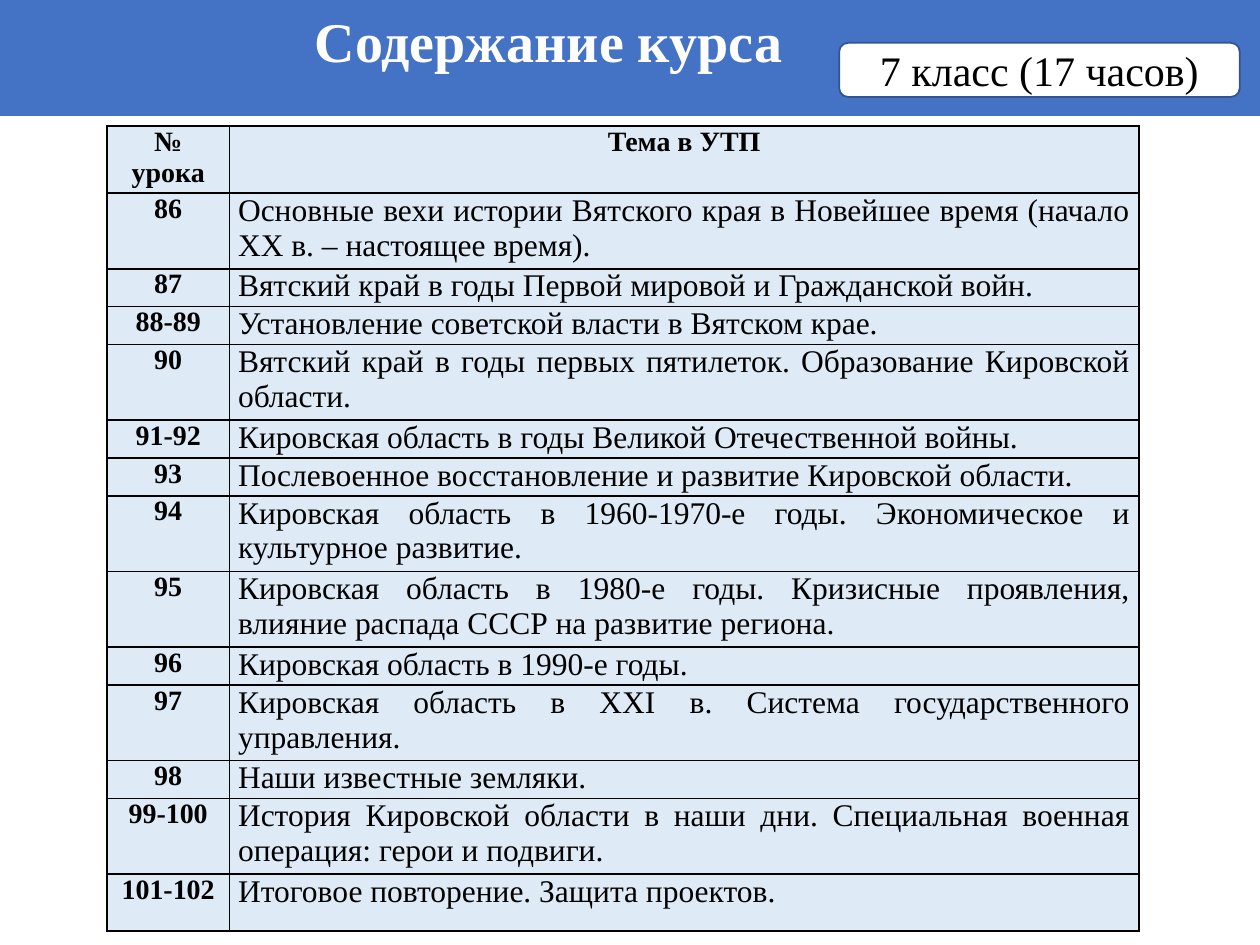
import pptx
import pptx.dml.color
import pptx.enum.shapes
import pptx.enum.text
import pptx.oxml
import pptx.oxml.ns
import pptx.util
from pptx.util import Inches

FONT = "Times New Roman"
ALIGN = pptx.enum.text.PP_ALIGN
SHAPE = pptx.enum.shapes.MSO_SHAPE

HEADER_HEIGHT, LINE_HEIGHT, LAST_HEIGHT = 0.53, 0.3, 0.45
COLUMN_WIDTHS = (0.97, 7.22)
HEADERS = ("№ урока", "Тема в УТП")
# Lesson numbers, topic, number of text lines
LESSONS = [
    ("86", "Основные вехи истории Вятского края в Новейшее время (начало XX в. – настоящее время).", 2),
    ("87", "Вятский край в годы Первой мировой и Гражданской войн.", 1),
    ("88-89", "Установление советской власти в Вятском крае.", 1),
    ("90", "Вятский край в годы первых пятилеток. Образование Кировской области.", 2),
    ("91-92", "Кировская область в годы Великой Отечественной войны.", 1),
    ("93", "Послевоенное восстановление и развитие Кировской области.", 1),
    ("94", "Кировская область в 1960-1970-е годы. Экономическое и культурное развитие.", 2),
    ("95", "Кировская область в 1980-е годы. Кризисные проявления, влияние распада СССР на развитие региона.", 2),
    ("96", "Кировская область в 1990-е годы.", 1),
    ("97", "Кировская область в XXI в. Система государственного управления.", 2),
    ("98", "Наши известные земляки.", 1),
    ("99-100", "История Кировской области в наши дни. Специальная военная операция: герои и подвиги.", 2),
    ("101-102", "Итоговое повторение. Защита проектов.", 1),
]


def rgb(color):
    return pptx.dml.color.RGBColor.from_string(color)


def set_text(tf, text, size, color="000000", bold=False, align=ALIGN.CENTER):
    tf.text = text
    tf.word_wrap = True
    p = tf.paragraphs[0]
    p.alignment = align
    font = p.runs[0].font
    font.name, font.size, font.bold = FONT, pptx.util.Pt(size), bold
    font.color.rgb = rgb(color)


def add_box(s, kind, left, top, width, height, fill, line=None):
    sp = s.shapes.add_shape(kind, Inches(left), Inches(top), Inches(width), Inches(height))
    sp.shadow.inherit = False
    sp.fill.solid()
    sp.fill.fore_color.rgb = rgb(fill)
    if line:
        sp.line.color.rgb = rgb(line)
        sp.line.width = pptx.util.Pt(1)
    else:
        sp.line.fill.background()
    return sp


def add_title(s, text):
    sp = s.shapes.add_textbox(Inches(-0.17), Inches(0), Inches(9.05), Inches(0.64))
    set_text(sp.text_frame, text, 32, "FFFFFF", bold=True)
    sp.text_frame.auto_size = pptx.enum.text.MSO_AUTO_SIZE.SHAPE_TO_FIT_TEXT


def add_borders(cell, color="000000"):
    """Draw a 1 pt line on each side; borders must precede the cell's fill."""
    tc_pr = cell._tc.get_or_add_tcPr()
    for i, side in enumerate(("lnL", "lnR", "lnT", "lnB")):
        tc_pr.insert(i, pptx.oxml.parse_xml(
            f'<a:{side} {pptx.oxml.ns.nsdecls("a")} w="12700"><a:solidFill>'
            f'<a:srgbClr val="{color}"/></a:solidFill></a:{side}>'))


def fill_cell(cell, text, size, bold, align):
    cell.margin_left = cell.margin_right = Inches(0.07)
    cell.margin_top = cell.margin_bottom = 0
    cell.fill.solid()
    cell.fill.fore_color.rgb = rgb("DEEBF7")
    add_borders(cell)
    set_text(cell.text_frame, text, size, bold=bold, align=align)


def add_lesson_table(s):
    heights = [HEADER_HEIGHT] + [LINE_HEIGHT * lines for _, _, lines in LESSONS]
    heights[-1] = LAST_HEIGHT
    table = s.shapes.add_table(len(heights), 2, Inches(0.85), Inches(1),
                               Inches(sum(COLUMN_WIDTHS)), Inches(sum(heights))).table
    for column, width in zip(table.columns, COLUMN_WIDTHS):
        column.width = Inches(width)
    for row, height in zip(table.rows, heights):
        row.height = Inches(height)
    for i, header in enumerate(HEADERS):
        fill_cell(table.cell(0, i), header, 16, True, ALIGN.CENTER)
    for i, (number, topic, _) in enumerate(LESSONS, 1):
        fill_cell(table.cell(i, 0), number, 16, True, ALIGN.CENTER)
        fill_cell(table.cell(i, 1), topic, 18, False, ALIGN.JUSTIFY)


def main():
    prs = pptx.Presentation()
    prs.slide_width, prs.slide_height = Inches(10), Inches(7.5)
    s = prs.slides.add_slide(prs.slide_layouts[6])
    add_box(s, SHAPE.RECTANGLE, 0, 0, 10, 0.92, "4472C4")
    add_title(s, "Содержание курса")
    grade = add_box(s, SHAPE.ROUNDED_RECTANGLE, 6.66, 0.34, 3.18, 0.43, "FFFFFF", "325491")
    set_text(grade.text_frame, "7 класс (17 часов)", 24)
    grade.text_frame.vertical_anchor = pptx.enum.text.MSO_ANCHOR.MIDDLE
    add_lesson_table(s)
    prs.save("out.pptx")


if __name__ == "__main__":
    main()
